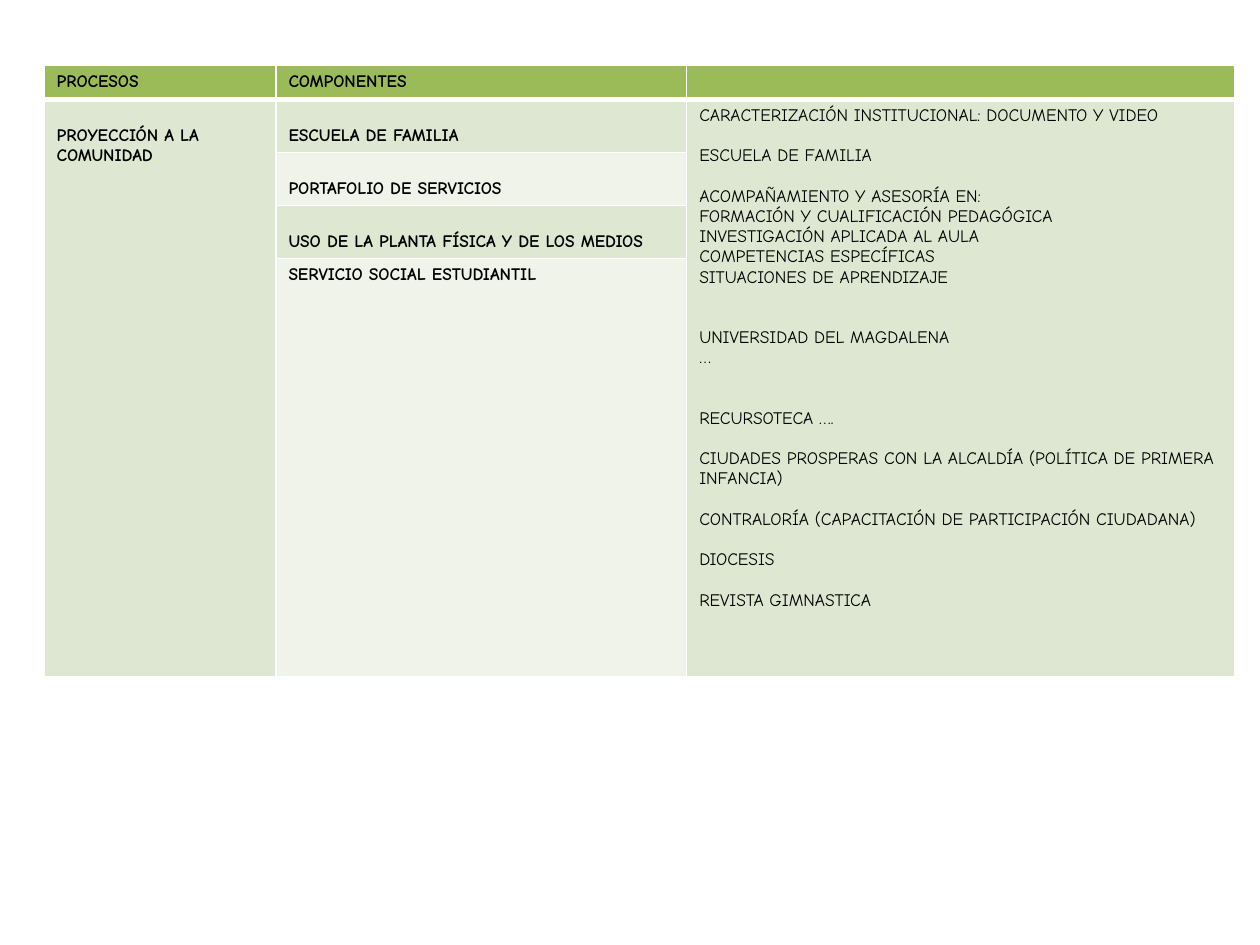
from dataclasses import dataclass

from lxml import etree
from pptx import Presentation
from pptx.dml.color import RGBColor
from pptx.oxml.ns import qn
from pptx.util import Inches, Pt

COLORS = {
    "header": "9BBB59",
    "band": "DEE7D1",
    "light": "EFF3EA",
    "border": "FFFFFF",
    "text": "000000",
}
FONT = "Comic Neue"
TEXT_SIZE = 10
LINE_POINTS = 11.54
LINE_INCHES = 0.16
CELL_MARGIN = 0.05
COLUMN_WIDTHS = [1.84, 3.26, 4.35]
ROW_HEIGHTS = [0.26, 0.42, 0.42, 0.42, 3.32]


@dataclass(frozen=True)
class Line:
    text: str
    gap: int = 0


@dataclass(frozen=True)
class Entry:
    row: int
    column: int
    lines: tuple[Line, ...]
    bold: bool = True
    top_gap: int = 0


ACTIVITIES = (
    Line("CARACTERIZACIÓN INSTITUCIONAL: DOCUMENTO Y VIDEO"),
    Line("ESCUELA DE FAMILIA", 1),
    Line("ACOMPAÑAMIENTO Y ASESORÍA EN:", 1),
    Line("FORMACIÓN Y CUALIFICACIÓN PEDAGÓGICA"),
    Line("INVESTIGACIÓN APLICADA AL AULA"),
    Line("COMPETENCIAS ESPECÍFICAS"),
    Line("SITUACIONES DE APRENDIZAJE"),
    Line("UNIVERSIDAD DEL MAGDALENA", 2),
    Line("…"),
    Line("RECURSOTECA ….", 2),
    Line("CIUDADES PROSPERAS CON LA ALCALDÍA (POLÍTICA DE PRIMERA INFANCIA)", 1),
    Line("CONTRALORÍA (CAPACITACIÓN DE PARTICIPACIÓN CIUDADANA)", 1),
    Line("DIOCESIS", 1),
    Line("REVISTA GIMNASTICA", 1),
)
ENTRIES = [
    Entry(0, 0, (Line("PROCESOS"),)),
    Entry(0, 1, (Line("COMPONENTES"),)),
    Entry(1, 0, (Line("PROYECCIÓN A LA COMUNIDAD"),), top_gap=1),
    Entry(1, 1, (Line("ESCUELA DE FAMILIA"),), top_gap=1),
    Entry(2, 1, (Line("PORTAFOLIO DE SERVICIOS"),), top_gap=1),
    Entry(3, 1, (Line("USO DE LA PLANTA FÍSICA Y DE LOS MEDIOS"),), top_gap=1),
    Entry(4, 1, (Line("SERVICIO SOCIAL ESTUDIANTIL"),)),
    Entry(1, 2, ACTIVITIES, bold=False),
]


def write_text(paragraph, text: str, *, bold: bool = True, gap: int = 0) -> None:
    if gap:
        paragraph.space_before = Pt(gap * LINE_POINTS)
    run = paragraph.add_run()
    run.text = text
    run.font.name = FONT
    run.font.size = Pt(TEXT_SIZE)
    run.font.bold = bold
    run.font.color.rgb = RGBColor.from_string(COLORS["text"])


def style_cell(cell, color: str, bottom_width: float) -> None:
    properties = cell._tc.get_or_add_tcPr()
    widths = {"a:lnL": 1, "a:lnR": 1, "a:lnT": 1, "a:lnB": bottom_width}
    for tag, width in widths.items():
        border = etree.SubElement(properties, qn(tag), w=str(Pt(width)))
        fill = etree.SubElement(border, qn("a:solidFill"))
        etree.SubElement(fill, qn("a:srgbClr"), val=COLORS["border"])
    cell.fill.solid()
    cell.fill.fore_color.rgb = RGBColor.from_string(COLORS[color])
    cell.margin_top = cell.margin_bottom = Inches(CELL_MARGIN)


def size_empty_cell(cell) -> None:
    paragraph = cell.text_frame.paragraphs[0]
    etree.SubElement(paragraph._p, qn("a:endParaRPr"), sz=str(TEXT_SIZE * 100))


def fill_entry(cell, entry: Entry) -> None:
    cell.margin_top = Inches(CELL_MARGIN + entry.top_gap * LINE_INCHES)
    frame = cell.text_frame
    for index, line in enumerate(entry.lines):
        paragraph = frame.add_paragraph() if index else frame.paragraphs[0]
        write_text(paragraph, line.text, bold=entry.bold, gap=line.gap)


def build_table(slide) -> None:
    table = slide.shapes.add_table(
        len(ROW_HEIGHTS), len(COLUMN_WIDTHS),
        Inches(0.35), Inches(0.52),
        Inches(sum(COLUMN_WIDTHS)), Inches(sum(ROW_HEIGHTS)),
    ).table
    for column, width in zip(table.columns, COLUMN_WIDTHS):
        column.width = Inches(width)
    for row, height in zip(table.rows, ROW_HEIGHTS):
        row.height = Inches(height)

    last_row = len(ROW_HEIGHTS) - 1
    for column in (0, 2):
        table.cell(1, column).merge(table.cell(last_row, column))

    filled = {(entry.row, entry.column) for entry in ENTRIES}
    for row in range(len(ROW_HEIGHTS)):
        for column in range(len(COLUMN_WIDTHS)):
            cell = table.cell(row, column)
            band = "band" if row % 2 or column != 1 else "light"
            style_cell(cell, band if row else "header", 1 if row else 3)
            if (row, column) not in filled:
                size_empty_cell(cell)
    for entry in ENTRIES:
        fill_entry(table.cell(entry.row, entry.column), entry)


def main() -> None:
    presentation = Presentation()
    presentation.slide_width = Inches(10)
    presentation.slide_height = Inches(7.5)
    build_table(presentation.slides.add_slide(presentation.slide_layouts[6]))
    presentation.save("out.pptx")


if __name__ == "__main__":
    main()
